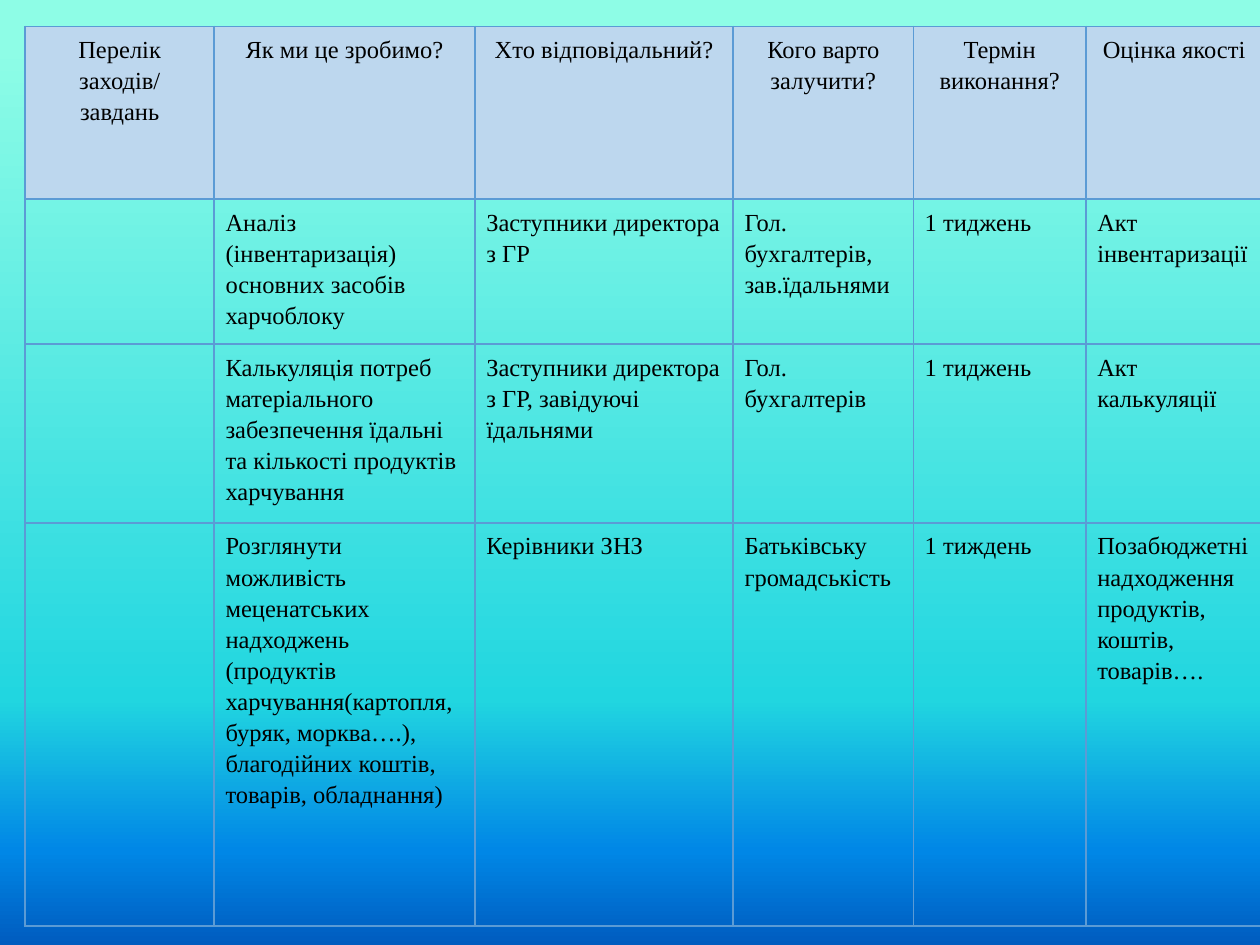
from lxml import etree
from pptx import Presentation
from pptx.dml.color import RGBColor
from pptx.enum.text import PP_ALIGN
from pptx.oxml import parse_xml
from pptx.oxml.ns import nsdecls, qn
from pptx.util import Inches, Pt

CENTER, LEFT = PP_ALIGN.CENTER, PP_ALIGN.LEFT
BLACK = RGBColor(0x00, 0x00, 0x00)
HEADER_FILL = RGBColor(0xBD, 0xD7, 0xEE)
BORDER = RGBColor(0x5B, 0x9B, 0xD5)
GRADIENT = [
    (5, RGBColor(0x8E, 0xFD, 0xE6)),
    (74, RGBColor(0x21, 0xD6, 0xE0)),
    (90, RGBColor(0x00, 0x87, 0xE6)),
    (100, RGBColor(0x00, 0x5C, 0xBF)),
]

ROWS = [
    ("Перелік заходів/ завдань", "Як ми це зробимо?", "Хто відповідальний?",
     "Кого варто залучити?", "Термін виконання?", "Оцінка якості"),
    ("", "Аналіз (інвентаризація) основних засобів харчоблоку",
     "Заступники директора з ГР", "Гол. бухгалтерів, зав.їдальнями",
     "1 тиджень", "Акт інвентаризації"),
    ("", "Калькуляція потреб матеріального забезпечення їдальні та кількості "
     "продуктів харчування",
     "Заступники директора з ГР, завідуючі їдальнями", "Гол. бухгалтерів",
     "1 тиджень", "Акт калькуляції"),
    ("", "Розглянути можливість меценатських надходжень (продуктів "
     "харчування(картопля, буряк, морква….), благодійних коштів, товарів, обладнання)",
     "Керівники ЗНЗ", "Батьківську громадськість", "1 тиждень",
     "Позабюджетні надходження продуктів, коштів, товарів…."),
]
COLUMN_WIDTHS = [1.5, 2.07, 2.05, 1.43, 1.37, 1.4]
ROW_HEIGHTS = [1.37, 1.15, 1.42, 3.2]
TABLE_LEFT, TABLE_TOP = 0.2, 0.21

MARGINS = {"margin_left": Inches(0.09), "margin_right": Inches(0.09),
           "margin_top": Inches(0.05), "margin_bottom": Inches(0.05)}
PARAGRAPH_FORMAT = {"line_spacing": 1.15, "space_after": Pt(10)}
FONT_FORMAT = {"name": "Times New Roman", "size": Pt(14), "bold": False}


def apply(target, values):
    for name, value in values.items():
        setattr(target, name, value)


def paint_background(page):
    """Fill the page with the vertical gradient."""
    page.background.fill.gradient()
    properties = page.background._cSld.bg.bgPr
    stops = "".join(
        f'<a:gs pos="{position * 1000}"><a:srgbClr val="{color}"/></a:gs>'
        for position, color in GRADIENT)
    properties.replace(properties.find(qn("a:gradFill")), parse_xml(
        f'<a:gradFill {nsdecls("a")} rotWithShape="1"><a:gsLst>{stops}</a:gsLst>'
        '<a:lin ang="5400000" scaled="0"/></a:gradFill>'))


def add_borders(cell):
    properties = cell._tc.get_or_add_tcPr()
    for index, side in enumerate(("lnL", "lnR", "lnT", "lnB")):
        line = etree.Element(qn(f"a:{side}"), w=str(Pt(1)))
        fill = etree.SubElement(line, qn("a:solidFill"))
        etree.SubElement(fill, qn("a:srgbClr"), val=str(BORDER))
        properties.insert(index, line)


def format_cell(cell, text, is_header):
    apply(cell, MARGINS)
    if is_header:
        cell.fill.solid()
        cell.fill.fore_color.rgb = HEADER_FILL
    else:
        cell.fill.background()
    add_borders(cell)
    para = cell.text_frame.paragraphs[0]
    apply(para, PARAGRAPH_FORMAT)
    para.alignment = CENTER if is_header else LEFT
    if text:
        span = para.add_run()
        span.text = text
        apply(span.font, FONT_FORMAT)
        span.font.color.rgb = BLACK


def add_plan_table(page):
    table = page.shapes.add_table(
        len(ROWS), len(COLUMN_WIDTHS), Inches(TABLE_LEFT), Inches(TABLE_TOP),
        Inches(sum(COLUMN_WIDTHS)), Inches(sum(ROW_HEIGHTS))).table
    apply(table, {"first_row": False, "horz_banding": False})
    for column, width in zip(table.columns, COLUMN_WIDTHS):
        column.width = Inches(width)
    for index, (row, height) in enumerate(zip(table.rows, ROW_HEIGHTS)):
        row.height = Inches(height)
        for cell, text in zip(row.cells, ROWS[index]):
            format_cell(cell, text, is_header=index == 0)


def main():
    deck = Presentation()
    deck.slide_width, deck.slide_height = Inches(10), Inches(7.5)
    page = deck.slides.add_slide(deck.slide_layouts[6])
    paint_background(page)
    add_plan_table(page)
    deck.save("out.pptx")


if __name__ == "__main__":
    main()
